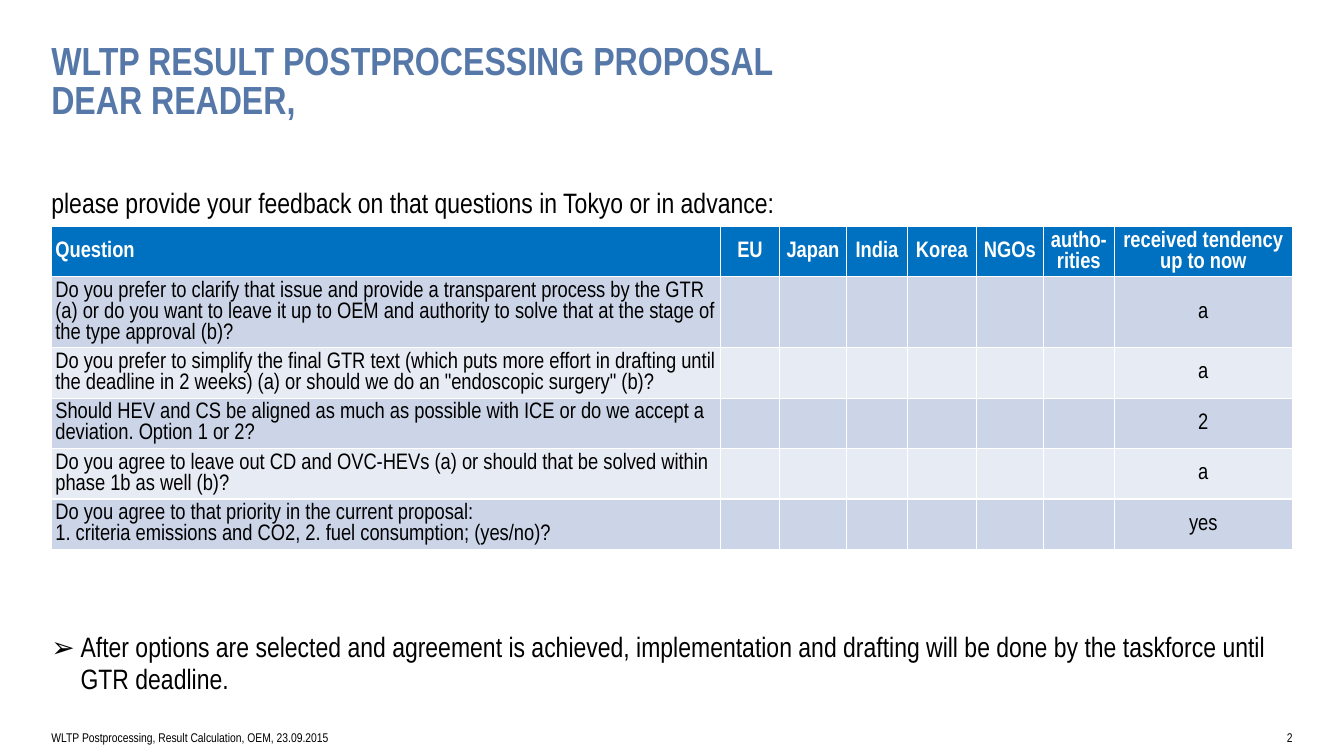
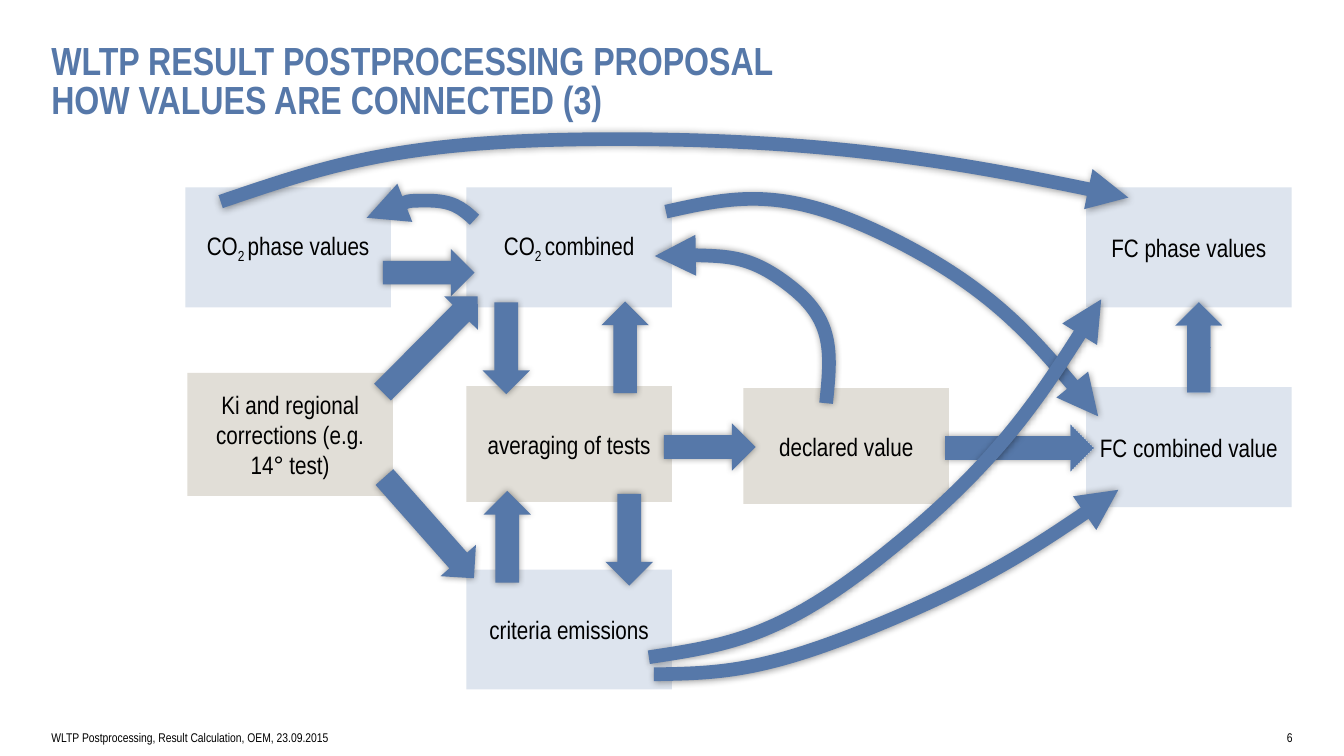
import pptx
import pptx.util
import pptx.dml.color
import pptx.enum.dml
import pptx.enum.shapes
import pptx.enum.text
import pptx.oxml.ns
import pptx.oxml.xmlchemy

Inches, Pt = pptx.util.Inches, pptx.util.Pt
SHAPE = pptx.enum.shapes.MSO_SHAPE
ALIGN = pptx.enum.text.PP_ALIGN
ANCHOR = pptx.enum.text.MSO_ANCHOR
PATTERN = pptx.enum.dml.MSO_PATTERN
qn = pptx.oxml.ns.qn

# Shared look
FONT = "Arial Narrow"
BLUE, PALE_BLUE, SAND, HEADER_BLUE = "5678A9", "DDE4EE", "E1DED7", "0070C0"
BAND_COLORS = ("CCD5E8", "E7EBF4")
BLACK, WHITE = "000000", "FFFFFF"
MARGIN, CONTENT_WIDTH = 0.51, 12.32
DECK_TITLE = "WLTP RESULT POSTPROCESSING PROPOSAL"
FOOTER = "WLTP Postprocessing, Result Calculation, OEM, 23.09.2015"

# Feedback slide
REQUEST = "please provide your feedback on that questions in Tokyo or in advance:"
NEXT_STEP = ("After options are selected and agreement is achieved, implementation "
             "and drafting will be done by the taskforce until GTR deadline.")
HEADINGS = ["Question", "EU", "Japan", "India", "Korea", "NGOs", "autho-rities",
            "received tendency up to now"]
COLUMN_WIDTHS = [6.64, 0.59, 0.66, 0.61, 0.68, 0.67, 0.7, 1.77]
ROW_HEIGHTS = [0.49, 0.7, 0.5, 0.5, 0.5, 0.5]
QUESTIONS = [
    ("Do you prefer to clarify that issue and provide a transparent process by the "
     "GTR (a) or do you want to leave it up to OEM and authority to solve that at "
     "the stage of the type approval (b)?", "a"),
    ("Do you prefer to simplify the final GTR text (which puts more effort in "
     "drafting until the deadline in 2 weeks) (a) or should we do an "
     "\"endoscopic surgery\" (b)?", "a"),
    ("Should HEV and CS be aligned as much as possible with ICE or do we accept a "
     "deviation. Option 1 or 2?", "2"),
    ("Do you agree to leave out CD and OVC-HEVs (a) or should that be solved within "
     "phase 1b as well (b)?", "a"),
    ("Do you agree to that priority in the current proposal:\n"
     "1. criteria emissions and CO2, 2. fuel consumption; (yes/no)?", "yes"),
]

# Connection slide: text between underscores is subscript
BOX_WIDTH = 2.04
BOXES = [  # text, left, top, height, fill
    ("CO_2 _phase values", 1.84, 1.86, 1.19, PALE_BLUE),
    ("CO_2 _combined", 4.63, 1.86, 1.19, PALE_BLUE),
    ("FC phase values", 10.78, 1.86, 1.19, PALE_BLUE),
    ("Ki and regional corrections (e.g. 14° test)", 1.86, 3.7, 1.22, SAND),
    ("averaging of tests", 4.63, 3.83, 1.15, SAND),
    ("declared value", 7.38, 3.85, 1.15, SAND),
    ("FC combined value", 10.78, 3.84, 1.19, PALE_BLUE),
    ("criteria emissions", 4.63, 5.65, 1.19, PALE_BLUE),
]
ARROW_HEIGHT = 0.47
BLOCK_ARROWS = [  # left, top, length, rotation, pattern
    (9.38, 4.21, 1.48, 0, PATTERN.DARK_VERTICAL),
    (4.58, 5.09, 0.91, 270, None),
    (5.79, 5.12, 0.91, 90, None),
    (6.59, 4.2, 0.91, 0, None),
    (3.8, 2.47, 0.91, 0, None),
    (5.75, 3.21, 0.91, 270, None),
    (4.57, 3.22, 0.91, 90, None),
    (3.6, 3.18, 1.34, 314.8, None),
    (3.59, 5, 1.34, 48.5, None),
    (11.45, 3.21, 0.9, 270, PATTERN.DARK_HORIZONTAL),
]
CURVED_ARROWS = [  # start, then two Bezier segments of three points
    [(6.61, 2.1), (7.32, 1.94), (7.79, 1.85), (8.8, 2.34),
     (9.8, 2.83), (10.41, 3.51), (10.9, 4.13)],
    [(8.2, 4), (8.25, 3.51), (8.28, 3.19), (7.87, 2.86),
     (7.46, 2.53), (6.96, 2.51), (6.5, 2.54)],
    [(2.19, 2), (3.28, 1.63), (4, 1.38), (6.12, 1.38),
     (8.25, 1.38), (9.85, 1.67), (11.2, 1.96)],
    [(4.71, 2.18), (4.58, 2.06), (4.49, 1.99), (4.24, 1.99),
     (3.99, 1.99), (3.8, 2.07), (3.64, 2.16)],
    [(6.44, 6.52), (7.23, 6.4), (7.76, 6.32), (8.81, 5.47),
     (9.86, 4.63), (10.46, 3.75), (10.93, 2.97)],
    [(6.49, 6.69), (7.13, 6.68), (7.56, 6.67), (8.64, 6.23),
     (9.72, 5.79), (10.48, 5.3), (11.1, 4.86)],
]


def rgb(value):
    return pptx.dml.color.RGBColor.from_string(value)


def add_xml(parent, tag, **attributes):
    child = pptx.oxml.xmlchemy.OxmlElement(tag)
    for name, value in attributes.items():
        child.set(name, str(value))
    parent.append(child)
    return child


def write(frame, text, size=18, color=BLACK, bold=False, align=ALIGN.LEFT,
          spacing=None):
    """Fill a text frame: one paragraph a line, subscripts between underscores."""
    frame.word_wrap = True
    for number, line in enumerate(text.split("\n")):
        paragraph = frame.paragraphs[0] if number == 0 else frame.add_paragraph()
        paragraph.alignment = align
        paragraph.space_before = Pt(0)
        if spacing:
            paragraph.line_spacing = spacing
        for part, piece in enumerate(line.split("_")):
            run = paragraph.add_run()
            run.text = piece
            run.font.name, run.font.size, run.font.bold = FONT, Pt(size), bold
            run.font.color.rgb = rgb(color)
            if part % 2:
                run.font._element.set("baseline", "-25000")


def place(holder, left, top, width, height, anchor):
    """Position a text holder and give it no insets."""
    holder.left, holder.top = Inches(left), Inches(top)
    holder.width, holder.height = Inches(width), Inches(height)
    frame = holder.text_frame
    frame.margin_left = frame.margin_right = 0
    frame.margin_top = frame.margin_bottom = 0
    frame.vertical_anchor = anchor
    frame.auto_size = pptx.enum.text.MSO_AUTO_SIZE.NONE
    return frame


def start_slide(deck, layout, heading, number):
    slide = deck.slides.add_slide(deck.slide_layouts[layout])
    title = place(slide.shapes.title, MARGIN, 0.44, CONTENT_WIDTH, 0.74, ANCHOR.TOP)
    write(title, f"{DECK_TITLE}\n{heading}", size=28, color=BLUE, bold=True,
          spacing=Pt(28))
    for text, left, width, align in ((FOOTER, MARGIN, 4.49, ALIGN.LEFT),
                                     (str(number), 12.5, 0.33, ALIGN.RIGHT)):
        box = slide.shapes.add_textbox(0, 0, 0, 0)
        write(place(box, left, 7.14, width, 0.36, ANCHOR.MIDDLE), text,
              size=9, align=align)
    return slide


def add_shadow(shape):
    shape.shadow.inherit = False
    effects = shape._element.spPr.find(qn("a:effectLst"))
    shadow = add_xml(effects, "a:outerShdw", blurRad=Pt(5), dist=0, dir=0,
                     rotWithShape=0)
    add_xml(add_xml(shadow, "a:srgbClr", val=BLACK), "a:alpha", val=40000)


def add_block_arrow(slide, left, top, length, rotation, pattern):
    arrow = slide.shapes.add_shape(SHAPE.RIGHT_ARROW, Inches(left), Inches(top),
                                   Inches(length), Inches(ARROW_HEIGHT))
    arrow.rotation = rotation
    if pattern:
        arrow.fill.patterned()
        arrow.fill.pattern = pattern
        arrow.fill.back_color.rgb = rgb(WHITE)
    else:
        arrow.fill.solid()
    arrow.fill.fore_color.rgb = rgb(BLUE)
    arrow.line.fill.background()
    add_shadow(arrow)


def add_curved_arrow(slide, points):
    start, *rest = [(Inches(x), Inches(y)) for x, y in points]
    builder = slide.shapes.build_freeform(*start)
    builder.add_line_segments(rest, close=False)
    curve = builder.convert_to_shape()
    # Join each three straight segments into one Bezier segment
    segments = list(curve._element.iter(qn("a:lnTo")))
    outline = segments[0].getparent()
    for first in range(0, len(segments), 3):
        bezier = add_xml(outline, "a:cubicBezTo")
        for segment in segments[first:first + 3]:
            bezier.append(segment[0])
            outline.remove(segment)
    curve.fill.background()
    curve.line.color.rgb = rgb(BLUE)
    curve.line.width = Pt(9.75)
    add_xml(curve._element.spPr.find(qn("a:ln")), "a:tailEnd", type="triangle")
    add_shadow(curve)


def build_feedback(deck):
    slide = start_slide(deck, 1, "DEAR READER,", 2)

    # Request above the table, next step below it
    body = place(slide.placeholders[1], MARGIN, 1.86, CONTENT_WIDTH, 4.98, ANCHOR.TOP)
    write(body, f"{REQUEST}\n{NEXT_STEP}", size=20, spacing=0.95)
    request, next_step = body.paragraphs
    next_step.space_before = Pt(295)
    for paragraph, bullet in ((request, None), (next_step, "➢")):
        properties = paragraph._p.get_or_add_pPr()
        properties.set("marL", str(Inches(0.29)))
        properties.set("indent", str(Inches(-0.29)))
        if bullet:
            add_xml(properties, "a:buChar", char=bullet)
        else:
            add_xml(properties, "a:buNone")

    # Question table
    rows = [HEADINGS] + [[question] + [""] * 6 + [tendency]
                         for question, tendency in QUESTIONS]
    table = slide.shapes.add_table(
        len(rows), len(HEADINGS), Inches(MARGIN), Inches(2.25),
        Inches(CONTENT_WIDTH), Inches(sum(ROW_HEIGHTS))).table
    for column, width in zip(table.columns, COLUMN_WIDTHS):
        column.width = Inches(width)
    for r, (texts, height) in enumerate(zip(rows, ROW_HEIGHTS)):
        table.rows[r].height = Inches(height)
        for c, text in enumerate(texts):
            cell = table.cell(r, c)
            cell.margin_left = cell.margin_right = Inches(0.04)
            cell.margin_top = cell.margin_bottom = Inches(0.04)
            cell.vertical_anchor = ANCHOR.MIDDLE
            cell.fill.solid()
            cell.fill.fore_color.rgb = rgb(BAND_COLORS[(r - 1) % 2] if r else HEADER_BLUE)
            if text:
                write(cell.text_frame, text, size=16, color=BLACK if r else WHITE,
                      bold=r == 0, align=ALIGN.CENTER if c else ALIGN.LEFT,
                      spacing=Pt(15))


def build_connections(deck):
    slide = start_slide(deck, 5, "HOW VALUES ARE CONNECTED (3)", 6)
    for text, left, top, height, fill in BOXES:
        box = slide.shapes.add_shape(SHAPE.RECTANGLE, Inches(left), Inches(top),
                                     Inches(BOX_WIDTH), Inches(height))
        box.shadow.inherit = False
        box.fill.solid()
        box.fill.fore_color.rgb = rgb(fill)
        box.line.fill.background()
        box.text_frame.vertical_anchor = ANCHOR.MIDDLE
        write(box.text_frame, text, align=ALIGN.CENTER)
    for arrow in BLOCK_ARROWS:
        add_block_arrow(slide, *arrow)
    for points in CURVED_ARROWS:
        add_curved_arrow(slide, points)


def main():
    deck = pptx.Presentation()
    deck.slide_width, deck.slide_height = Inches(13.34), Inches(7.5)
    build_feedback(deck)
    build_connections(deck)
    deck.save("out.pptx")


if __name__ == "__main__":
    main()
